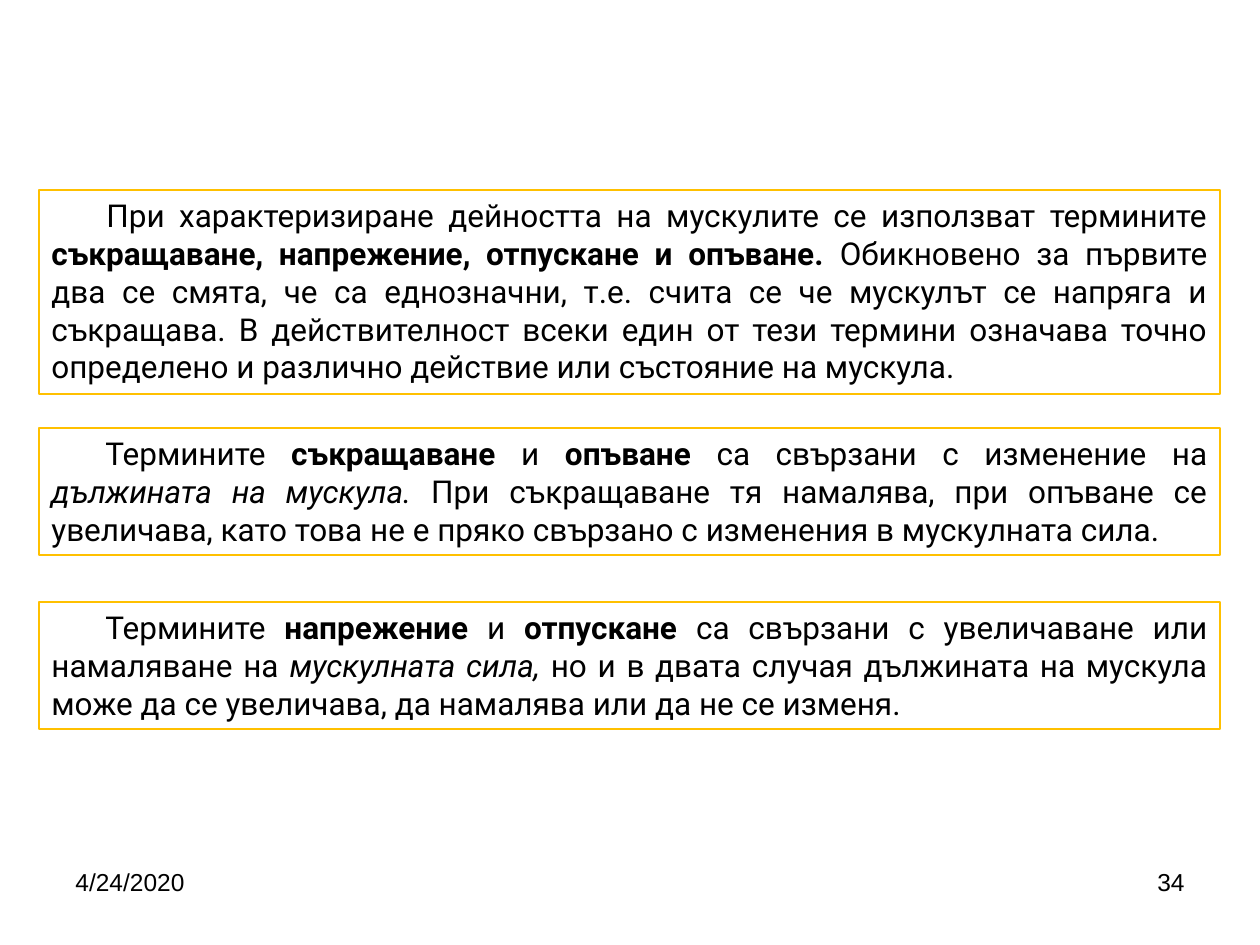
from pptx import Presentation
from pptx.dml.color import RGBColor
from pptx.enum.shapes import MSO_SHAPE
from pptx.enum.text import MSO_ANCHOR, MSO_AUTO_SIZE, PP_ALIGN
from pptx.util import Pt

PX = 914400 / 126

INTRO = [
    ("При характеризиране дейността на мускулите се използват термините ", {}),
    ("съкращаване, напрежение, отпускане и опъване. ", {"bold": True}),
    ("Обикновено за първите два се смята, че са еднозначни, т.е. счита се че "
     "мускулът се напряга и съкращава. В действителност всеки един от тези "
     "термини означава точно определено и различно действие или състояние "
     "на мускула.", {}),
]
LENGTH = [
    ("Термините ", {}),
    ("съкращаване ", {"bold": True}),
    ("и ", {}),
    ("опъване ", {"bold": True}),
    ("са свързани с изменение на ", {}),
    ("дължината на мускула.", {"italic": True}),
    (" При съкращаване тя намалява, при опъване се увеличава, като това "
     "не е пряко свързано с изменения в мускулната сила.", {}),
]
FORCE = [
    ("Термините ", {}),
    ("напрежение ", {"bold": True}),
    ("и ", {}),
    ("отпускане ", {"bold": True}),
    ("са свързани с увеличаване или намаляване на ", {}),
    ("мускулната сила,", {"italic": True}),
    (" но и в двата случая дължината на мускула може да се увеличава, "
     "да намалява или да не се изменя.", {}),
]


def px(n):
    """Turn pixels into EMU."""
    return round(n * PX)


def color(value):
    """Turn a hex string into a colour."""
    return RGBColor.from_string(value)


def add_text(p, text, font="Roboto", size=18, bold=False, italic=False, fill="000000"):
    """Add a formatted run to a paragraph."""
    r = p.add_run()
    r.text = text
    r.font.name = font
    r.font.size = Pt(size)
    r.font.bold = bold
    r.font.italic = italic
    r.font.color.rgb = color(fill)


def add_definition(s, box, runs, indent=54, after=3):
    """Place a framed, justified paragraph with an indented first line."""
    sp = s.shapes.add_shape(MSO_SHAPE.RECTANGLE, *map(px, box))
    sp.shadow.inherit = False
    sp.fill.solid()
    sp.fill.fore_color.rgb = color("FFFFFF")
    sp.line.color.rgb = color("FFC000")
    sp.line.width = Pt(0.75)
    tf = sp.text_frame
    tf.word_wrap = True
    tf.auto_size = MSO_AUTO_SIZE.SHAPE_TO_FIT_TEXT
    tf.vertical_anchor = MSO_ANCHOR.TOP
    p = tf.paragraphs[0]
    p.alignment = PP_ALIGN.JUSTIFY
    p.space_before = Pt(9)
    p.space_after = Pt(after)
    pPr = p._p.get_or_add_pPr()
    pPr.set("marL", "0")
    pPr.set("indent", str(px(indent)))
    for text, style in runs:
        add_text(p, text, **style)


def add_footer(s, box, date, number, field=294):
    """Place the date at the left and the slide number at the right."""
    left, top, width, height = box
    fields = [(left, date, PP_ALIGN.LEFT),
              (left + width - field, number, PP_ALIGN.RIGHT)]
    for x, text, align in fields:
        sp = s.shapes.add_textbox(*map(px, (x, top, field, height)))
        tf = sp.text_frame
        tf.word_wrap = True
        p = tf.paragraphs[0]
        p.alignment = align
        add_text(p, text, font="Arial", size=14)


def main():
    """Build and save the slide."""
    prs = Presentation()
    prs.slide_width, prs.slide_height = px(1260), px(945)
    s = prs.slides.add_slide(prs.slide_layouts[6])
    add_footer(s, (63, 861, 1134, 66), "4/24/2020", "34")
    add_definition(s, (39, 190, 1181, 204), INTRO, indent=55, after=0)
    add_definition(s, (39, 428, 1181, 127), LENGTH)
    add_definition(s, (39, 602, 1181, 127), FORCE)
    prs.save("out.pptx")


if __name__ == "__main__":
    main()
